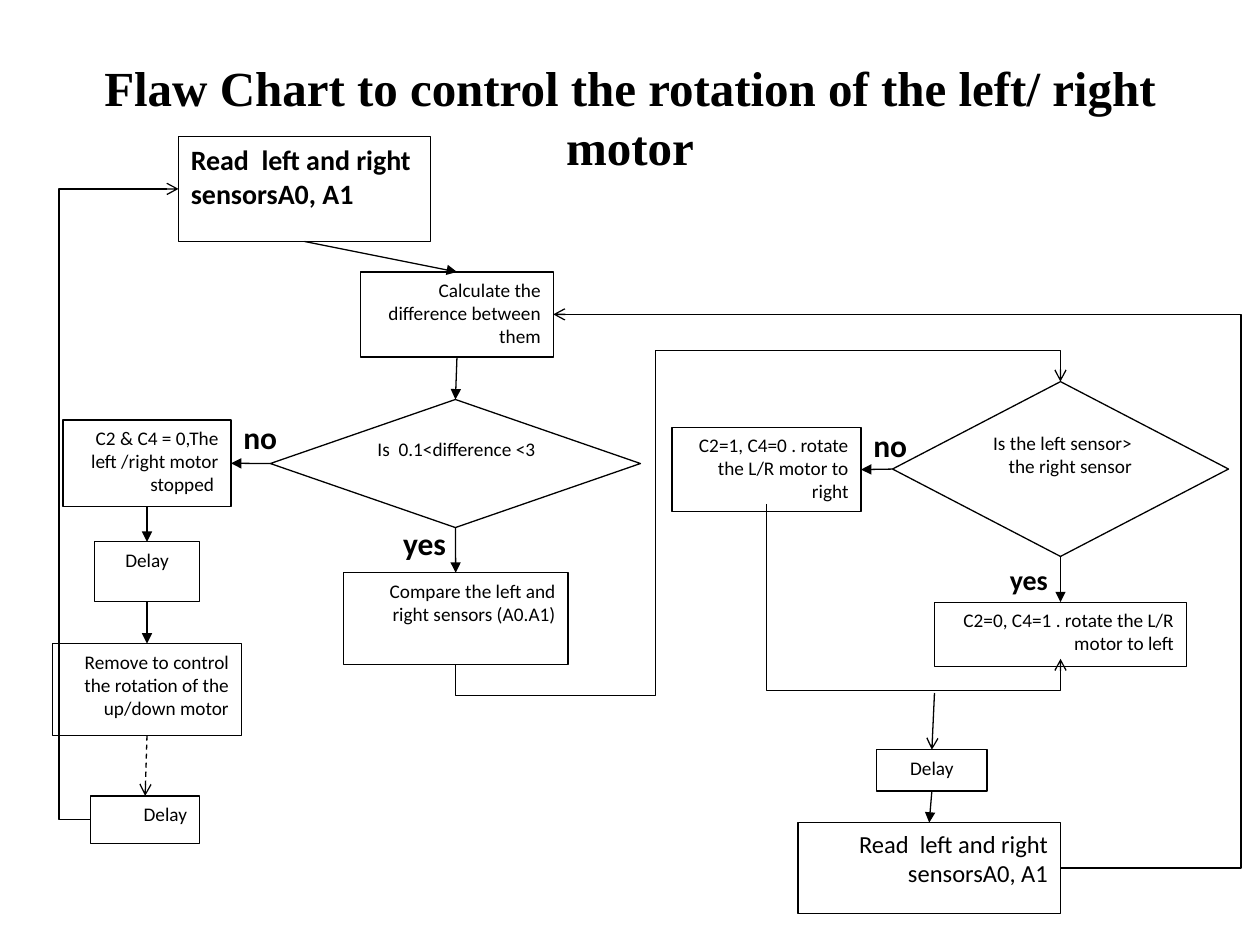
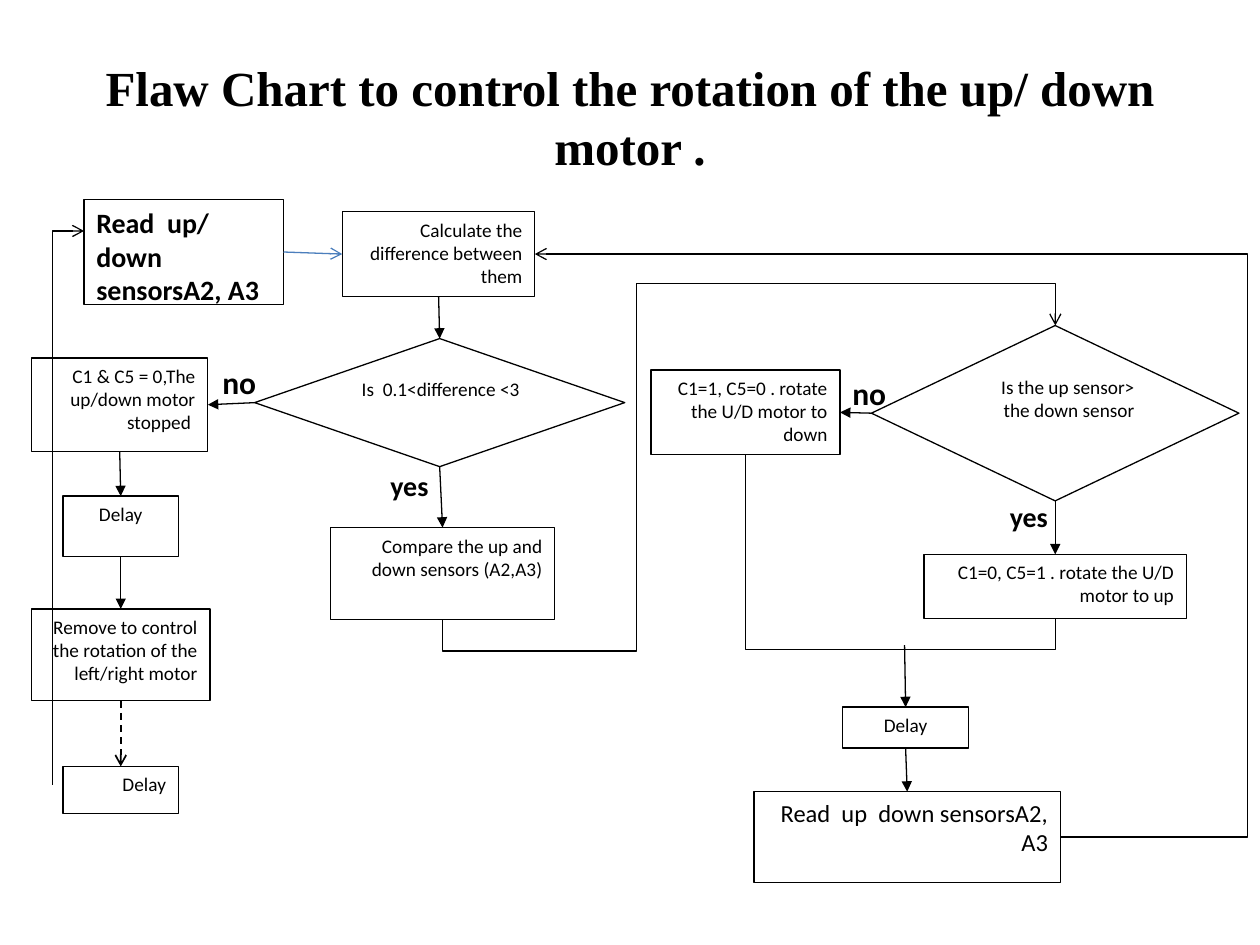
from lxml.etree import SubElement
from pptx import Presentation
from pptx.dml.color import RGBColor
from pptx.enum.dml import MSO_LINE
from pptx.enum.shapes import MSO_CONNECTOR, MSO_SHAPE
from pptx.enum.text import MSO_ANCHOR, MSO_AUTO_SIZE, PP_ALIGN
from pptx.oxml.ns import qn
from pptx.util import Emu, Inches, Pt

BLACK = RGBColor(0x00, 0x00, 0x00)
WHITE = RGBColor(0xFF, 0xFF, 0xFF)
BLUE = RGBColor(0x4B, 0x7E, 0xBC)
TITLE_FONT, BODY_FONT = "Times New Roman", "Calibri"
COLUMNS = 120  # square cells, so the slide is 90 rows high
TOP, LEFT, BOTTOM, RIGHT = range(4)

# Shape, text size, bold, alignment of every step in the flow
PROCESS, RECT, DECISION = (MSO_SHAPE.FLOWCHART_PROCESS, MSO_SHAPE.RECTANGLE,
                           MSO_SHAPE.FLOWCHART_DECISION)
STEP_STYLES = {
    "read": (PROCESS, 16, True, PP_ALIGN.LEFT),
    "calculate": (RECT, 11, False, PP_ALIGN.RIGHT),
    "in_range": (DECISION, 11, False, PP_ALIGN.RIGHT),
    "stop": (PROCESS, 11, False, PP_ALIGN.RIGHT),
    "compare": (RECT, 11, False, PP_ALIGN.RIGHT),
    "stop_delay": (PROCESS, 11, False, PP_ALIGN.CENTER),
    "remove": (PROCESS, 11, False, PP_ALIGN.RIGHT),
    "last_delay": (PROCESS, 11, False, PP_ALIGN.RIGHT),
    "which_side": (DECISION, 11, False, PP_ALIGN.RIGHT),
    "turn_yes": (RECT, 11, False, PP_ALIGN.RIGHT),
    "turn_no": (PROCESS, 11, False, PP_ALIGN.RIGHT),
    "turn_delay": (PROCESS, 11, False, PP_ALIGN.CENTER),
    "reread": (PROCESS, 14, False, PP_ALIGN.RIGHT),
}

# Arrows that both flows have
SHARED_ARROWS = [
    ("calculate", BOTTOM, "in_range", TOP),
    ("in_range", LEFT, "stop", RIGHT),
    ("in_range", BOTTOM, "compare", TOP),
    ("stop", BOTTOM, "stop_delay", TOP),
    ("stop_delay", BOTTOM, "remove", TOP),
    ("which_side", BOTTOM, "turn_yes", TOP),
    ("which_side", LEFT, "turn_no", RIGHT),
    ("turn_delay", BOTTOM, "reread", TOP),
]

# Steps: column, row, columns wide, rows high, text
LEFT_RIGHT_STEPS = {
    "read": (17, 13, 24, 10, "Read  left and right sensorsA0, A1"),
    "calculate": (34.35, 25.9, 18.35, 8.1, "Calculate the difference between them"),
    "in_range": (25.75, 38.05, 35.25, 12.2, "Is  0.1<difference <3"),
    "stop": (6, 40, 16, 8.25, "C2 & C4 = 0,The left /right motor stopped "),
    "compare": (32.7, 54.55, 21.4, 8.75, "Compare the left and right sensors (A0.A1)"),
    "stop_delay": (9, 51.6, 10, 5.7, "Delay"),
    "remove": (5, 61.3, 18, 8.75, "Remove to control the rotation of the up/down motor"),
    "last_delay": (8.65, 75.8, 10.35, 4.55, "Delay"),
    "which_side": (85, 36.35, 32, 16.65, "Is the left sensor> the right sensor"),
    "turn_yes": (89, 57.35, 24, 6.1, "C2=0, C4=1 . rotate the L/R motor to left"),
    "turn_no": (64, 40.7, 18, 8.05, "C2=1, C4=0 . rotate the L/R motor to right"),
    "turn_delay": (83.5, 71.4, 10.5, 3.95, "Delay"),
    "reread": (76, 78.35, 25, 8.65, "Read  left and right sensorsA0, A1"),
}
UP_DOWN_STEPS = {
    "read": (8, 19, 19, 10, "Read  up/  down sensorsA2, A3"),
    "calculate": (32.6, 20.15, 18.35, 8.1, "Calculate the difference between them"),
    "in_range": (24.25, 32.25, 35.25, 12.2, "Is  0.1<difference <3"),
    "stop": (3, 34.1, 16.8, 8.9, "C1 & C5 = 0,The up/down motor stopped "),
    "compare": (31.45, 50.25, 21.4, 8.75, "Compare the up and down sensors (A2,A3)"),
    "stop_delay": (6, 47.25, 11, 5.75, "Delay"),
    "remove": (3, 58, 17, 8.75, "Remove to control the rotation of the left/right motor"),
    "last_delay": (6, 73, 11, 4.5, "Delay"),
    "which_side": (83, 31, 35, 16.7, "Is the up sensor> the down sensor"),
    "turn_yes": (88, 52.8, 25, 6.1, "C1=0, C5=1 . rotate the U/D motor to up"),
    "turn_no": (62, 35.25, 18, 8.05, "C1=1, C5=0 . rotate the U/D motor to down"),
    "turn_delay": (80.25, 67.35, 12, 3.9, "Delay"),
    "reread": (71.8, 75.4, 29.2, 8.65, "Read  up  down sensorsA2, A3"),
}

# Labels: column, row, text, size
LEFT_RIGHT_LABELS = [(22, 39.25, "no", 18), (37.2, 49.35, "yes", 18),
                     (95, 53, "yes", 16), (82, 40, "no", 18)]
UP_DOWN_LABELS = [(20, 34, "no", 18), (36, 44, "yes", 16),
                  (95, 47, "yes", 16), (80, 35, "no", 18)]
LABEL_WIDTHS = {("no", 18): 5.65, ("yes", 18): 6.6, ("yes", 16): 6.2}


class FlowChart:
    def __init__(self, prs):
        self.prs = prs
        self.cell = prs.slide_width / COLUMNS

    def start(self, title, steps, labels):
        """Add a slide with its title, steps, labels and the shared arrows."""
        self.s = self.prs.slides.add_slide(self.prs.slide_layouts[5])
        self.steps = steps
        self.title(title)
        self.shapes = {name: self.step(name) for name in steps}
        for label in labels:
            self.label(*label)
        for ends in SHARED_ARROWS:
            self.arrow(*ends)

    def units(self, *cells):
        return [Emu(round(c * self.cell)) for c in cells]

    def run(self, p, text, size, bold, font=BODY_FONT):
        r = p.add_run()
        r.text = text
        r.font.name, r.font.size, r.font.bold = font, Pt(size), bold
        r.font.color.rgb = BLACK

    def title(self, text):
        sp = self.s.shapes.title
        sp.left, sp.top, sp.width, sp.height = self.units(6, 3.6, 108, 15)
        sp.text_frame.vertical_anchor = MSO_ANCHOR.MIDDLE
        p = sp.text_frame.paragraphs[0]
        p.alignment = PP_ALIGN.CENTER
        self.run(p, text, 28, True, TITLE_FONT)

    def step(self, name):
        *box, text = self.steps[name]
        kind, size, bold, align = STEP_STYLES[name]
        sp = self.s.shapes.add_shape(kind, *self.units(*box))
        sp.shadow.inherit = False
        sp.fill.solid()
        sp.fill.fore_color.rgb = WHITE
        sp.line.color.rgb = BLACK
        sp.line.width = Pt(0.75)
        tf = sp.text_frame
        tf.word_wrap = True
        tf.vertical_anchor = MSO_ANCHOR.TOP
        p = tf.paragraphs[0]
        p.alignment, p.space_after = align, Pt(10)
        self.run(p, text, size, bold)
        return sp

    def label(self, col, row, text, size):
        width = LABEL_WIDTHS[text, size]
        sp = self.s.shapes.add_textbox(*self.units(col, row, width, 0.27 * size))
        tf = sp.text_frame
        tf.word_wrap = False
        tf.auto_size = MSO_AUTO_SIZE.SHAPE_TO_FIT_TEXT
        self.run(tf.paragraphs[0], text, size, True)

    def port(self, name, side):
        """Grid point at the middle of a step's side."""
        x, y, w, h, _ = self.steps[name]
        return {TOP: (x + w / 2, y), LEFT: (x, y + h / 2),
                BOTTOM: (x + w / 2, y + h), RIGHT: (x + w, y + h / 2)}[side]

    def connector(self, kind, begin, end):
        return self.s.shapes.add_connector(kind, *self.units(*begin, *end))

    def format_line(self, cn, head, color=BLACK, width=0.75, dashed=False):
        cn.line.color.rgb = color
        cn.line.width = Pt(width)
        if dashed:
            cn.line.dash_style = MSO_LINE.DASH
        spPr = cn._element.spPr
        if head:
            SubElement(spPr.find(qn("a:ln")), qn("a:tailEnd"), type=head)
        SubElement(spPr, qn("a:effectLst"))

    def arrow(self, source, source_side, target, target_side, head="triangle", **style):
        cn = self.connector(MSO_CONNECTOR.STRAIGHT, self.port(source, source_side),
                            self.port(target, target_side))
        cn.begin_connect(self.shapes[source], source_side)
        cn.end_connect(self.shapes[target], target_side)
        self.format_line(cn, head, **style)

    def arrow_from(self, begin, target, head):
        """Draw an arrow from a free point to the top of a step."""
        cn = self.connector(MSO_CONNECTOR.STRAIGHT, begin, self.port(target, TOP))
        cn.end_connect(self.shapes[target], TOP)
        self.format_line(cn, head)

    def elbow(self, begin, end, turns, vertical=False, head="arrow"):
        """Bend at the given columns and rows; a vertical one leaves up or down."""
        cn = self.connector(MSO_CONNECTOR.ELBOW, begin, end)
        spPr = cn._element.spPr
        if vertical:
            (x1, y1), (x2, y2) = begin, end
            w, h = abs(y2 - y1), abs(x2 - x1)
            cn.left, cn.top, cn.width, cn.height = self.units(
                (x1 + x2 - w) / 2, (y1 + y2 - h) / 2, w, h)
            spPr.xfrm.flipH = True
            spPr.xfrm.set("rot", str((270 if y2 > y1 else 90) * 60000))
        geom = spPr.find(qn("a:prstGeom"))
        geom.set("prst", f"bentConnector{len(turns) + 2}")
        guides = geom.find(qn("a:avLst"))
        for i, turn in enumerate(turns):
            axis = (i + vertical) % 2
            share = (turn - begin[axis]) / (end[axis] - begin[axis])
            SubElement(guides, qn("a:gd"), name=f"adj{i + 1}",
                       fmla=f"val {round(share * 100000)}")
        self.format_line(cn, head)

    def long_routes(self, compare_turns, back_column):
        """Lead to the second decision, and from the last step back to the start."""
        self.elbow(self.port("compare", BOTTOM), self.port("which_side", TOP),
                   compare_turns, vertical=True)
        self.elbow(self.port("reread", RIGHT), self.port("calculate", RIGHT), [back_column])


def left_right_slide(chart):
    chart.start("Flaw Chart to control the rotation of the left/ right motor",
                LEFT_RIGHT_STEPS, LEFT_RIGHT_LABELS)
    chart.arrow("read", BOTTOM, "calculate", TOP)
    chart.arrow("remove", BOTTOM, "last_delay", TOP, "arrow", dashed=True)
    chart.arrow_from((89, 66), "turn_delay", "arrow")
    chart.elbow((73, 48), (101, 62.75), [65.75], vertical=True)
    chart.elbow(chart.port("last_delay", LEFT), chart.port("read", LEFT), [5.62])
    chart.long_routes([66.25, 62.4, 33.35], 118.2)


def up_down_slide(chart):
    chart.start("Flaw Chart to control the rotation of the up/ down motor .",
                UP_DOWN_STEPS, UP_DOWN_LABELS)
    chart.arrow("read", RIGHT, "calculate", LEFT, "arrow", color=BLUE)
    chart.arrow("remove", BOTTOM, "last_delay", TOP, "arrow", width=1, dashed=True)
    chart.arrow_from((86.15, 61.45), "turn_delay", "triangle")
    chart.elbow(chart.port("turn_no", BOTTOM), chart.port("turn_yes", BOTTOM),
                [61.9], vertical=True, head=None)
    chart.elbow((5, 74.75), (8, 22), [], vertical=True)
    chart.long_routes([62, 60.6, 27], 118.8)


def main():
    prs = Presentation()
    prs.slide_width, prs.slide_height = Inches(10), Inches(7.5)
    chart = FlowChart(prs)
    left_right_slide(chart)
    up_down_slide(chart)
    prs.save("out.pptx")


if __name__ == "__main__":
    main()
